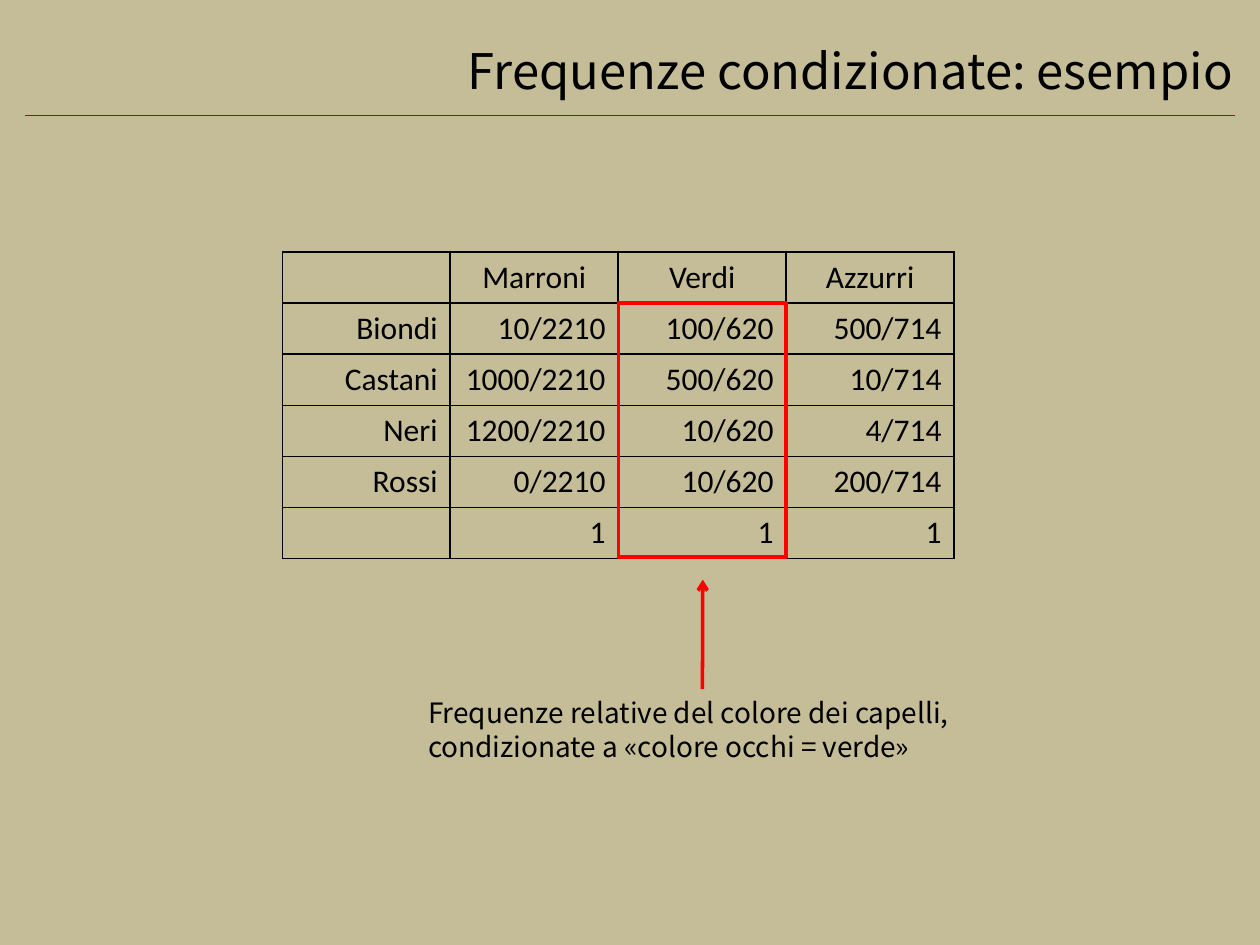
from dataclasses import dataclass

from lxml import etree
from pptx import Presentation
from pptx.dml.color import RGBColor
from pptx.enum import shapes, text
from pptx.oxml import ns
from pptx.util import Pt

SAND = RGBColor(0xC4, 0xBD, 0x97)
BLACK = RGBColor(0, 0, 0)
RED = RGBColor(0xFF, 0, 0)
DARK_RED = RGBColor(0xC0, 0, 0)
SANS = "Noto Sans CJK KR"
LEFT, CENTER, RIGHT = text.PP_ALIGN.LEFT, text.PP_ALIGN.CENTER, text.PP_ALIGN.RIGHT

TABLE_X, TABLE_Y, COL_W, ROW_H = 161.3, 144, 96, 29.2
ROWS = [
    ["", "Marroni", "Verdi", "Azzurri"],
    ["Biondi", "10/2210", "100/620", "500/714"],
    ["Castani", "1000/2210", "500/620", "10/714"],
    ["Neri", "1200/2210", "10/620", "4/714"],
    ["Rossi", "0/2210", "10/620", "200/714"],
    ["", "1", "1", "1"],
]
GREEN_COL = 2


@dataclass
class Label:
    lines: list[str]
    box: tuple[float, float, float, float]
    size: float
    align: text.PP_ALIGN
    anchor: text.MSO_ANCHOR
    spacing: float | None = None


TITLE = Label(["Frequenze condizionate: esempio"], (63.4, 15.1, 648, 49.7),
              28, RIGHT, text.MSO_ANCHOR.MIDDLE)
CAPTION = Label(["Frequenze relative del colore dei capelli,",
                 "condizionate a «colore occhi = verde»"],
                (237.6, 393.8, 327.6, 46.1), 16, LEFT, text.MSO_ANCHOR.TOP, 19.4)


def write(p, line: str, name: str, size: float, align) -> None:
    p.alignment = align
    r = p.add_run()
    r.text = line
    for key, value in {"name": name, "size": Pt(size)}.items():
        setattr(r.font, key, value)
    r.font.color.rgb = BLACK
    ea = etree.SubElement(r.font._element, ns.qn("a:ea"))
    ea.set("typeface", name)


def add_label(s, label: Label):
    sp = s.shapes.add_textbox(*map(Pt, label.box))
    tf = sp.text_frame
    for key, value in {"word_wrap": True, "vertical_anchor": label.anchor}.items():
        setattr(tf, key, value)
    for i, line in enumerate(label.lines):
        p = tf.add_paragraph() if i else tf.paragraphs[0]
        if label.spacing:
            p.line_spacing = Pt(label.spacing)
        write(p, line, SANS, label.size, label.align)
    return sp


def add_line(s, start: tuple, end: tuple, color: RGBColor, width: float):
    c = s.shapes.add_connector(shapes.MSO_CONNECTOR.STRAIGHT, *map(Pt, start + end))
    c.line.color.rgb = color
    c.line.width = Pt(width)
    etree.SubElement(c._element.spPr, ns.qn("a:effectLst"))
    return c


def add_borders(cell) -> None:
    tc_pr = cell._tc.get_or_add_tcPr()
    for side in ("lnL", "lnR", "lnT", "lnB"):
        ln = etree.SubElement(tc_pr, ns.qn(f"a:{side}"), w=str(Pt(1)))
        fill = etree.SubElement(ln, ns.qn("a:solidFill"))
        etree.SubElement(fill, ns.qn("a:srgbClr"), val=str(BLACK))


def add_frequencies(s) -> None:
    n_rows, n_cols = len(ROWS), len(ROWS[0])
    table = s.shapes.add_table(n_rows, n_cols, Pt(TABLE_X), Pt(TABLE_Y),
                               Pt(n_cols * COL_W), Pt(n_rows * ROW_H)).table
    table.first_row = table.horz_banding = False
    for col in table.columns:
        col.width = Pt(COL_W)
    for i, values in enumerate(ROWS):
        table.rows[i].height = Pt(ROW_H)
        for j, value in enumerate(values):
            cell = table.cell(i, j)
            add_borders(cell)
            cell.fill.background()
            if value:
                write(cell.text_frame.paragraphs[0], value, "Calibri", 18,
                      RIGHT if i else CENTER)


def add_highlight(s) -> None:
    sp = s.shapes.add_shape(shapes.MSO_SHAPE.RECTANGLE,
                            Pt(TABLE_X + GREEN_COL * COL_W), Pt(TABLE_Y + ROW_H),
                            Pt(COL_W), Pt((len(ROWS) - 1) * ROW_H - 1))
    sp.shadow.inherit = False
    sp.fill.background()
    sp.line.color.rgb = RED
    sp.line.width = Pt(2)


def main() -> None:
    prs = Presentation()
    prs.slide_width, prs.slide_height = Pt(720), Pt(540)
    s = prs.slides.add_slide(prs.slide_layouts[6])
    s.background.fill.solid()
    s.background.fill.fore_color.rgb = SAND

    add_label(s, TITLE)
    caption = add_label(s, CAPTION)
    arrow = add_line(s, (401.4, 393.8), (401.6, 331.2), RED, 2)
    arrow.begin_connect(caption, 0)
    etree.SubElement(arrow.line._get_or_add_ln(), ns.qn("a:tailEnd"), type="arrow")
    add_line(s, (14.4, 66), (705.6, 66), DARK_RED, 1)
    add_frequencies(s)
    add_highlight(s)
    prs.save("out.pptx")


if __name__ == "__main__":
    main()
